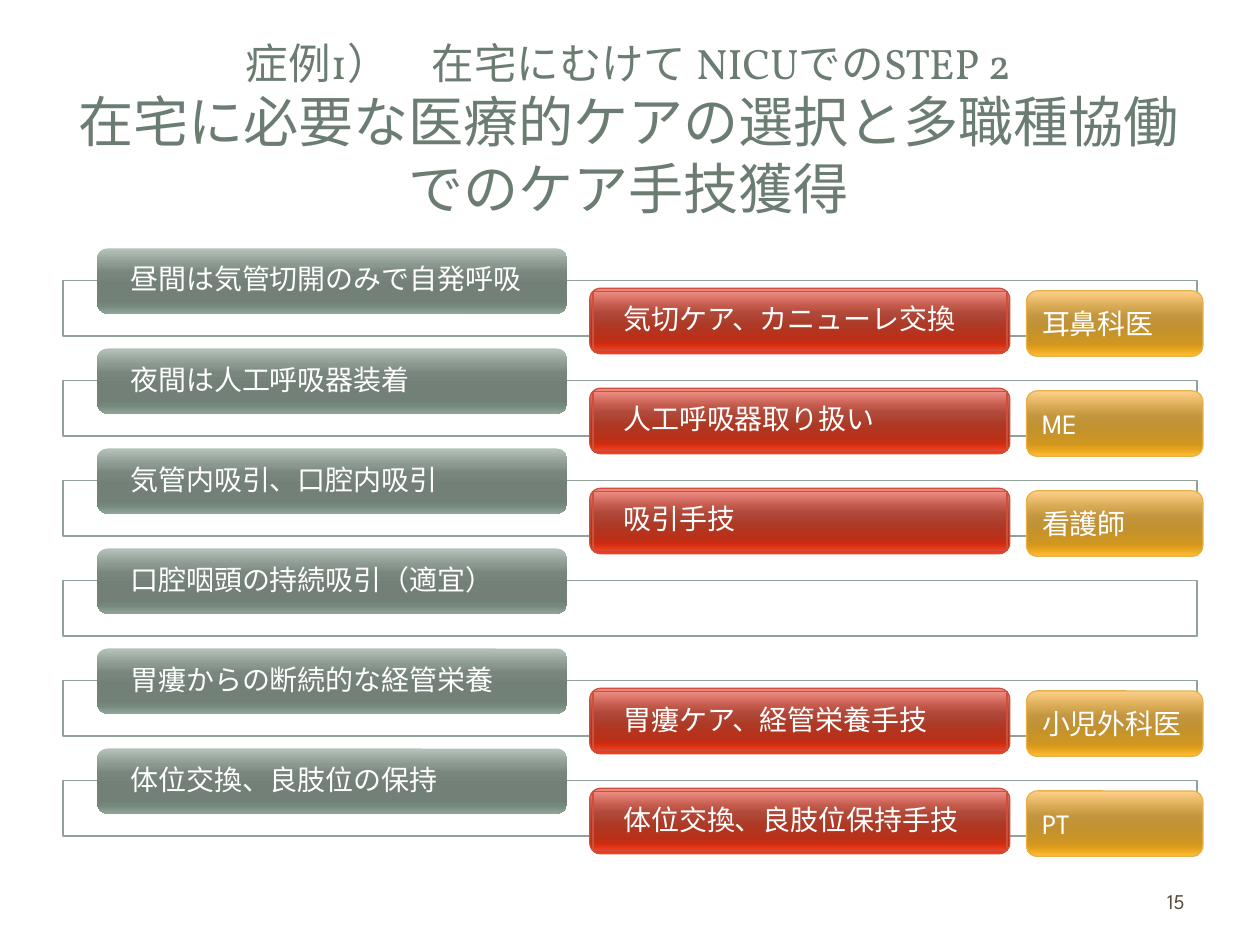
import pptx
import pptx.util
import pptx.dml.color
import pptx.enum.shapes
import pptx.enum.text
import pptx.oxml
import pptx.oxml.ns
import lxml.etree

Pt = pptx.util.Pt
SHAPE = pptx.enum.shapes.MSO_SHAPE
ALIGN = pptx.enum.text.PP_ALIGN
MIDDLE = pptx.enum.text.MSO_ANCHOR.MIDDLE

BODY_FONT = "League Spartan"
ROW_PITCH = 57.15
STOPS = [0, 25, 38, 55, 80, 88, 100]
GREEN = ["B6C3BB", "8B9890", "79867E", "728078", "708176", "75887C", "91A79A"]
RED = ["EF8E85", "C1584A", "B04839", "AD3A26", "BA2F18", "CD2C10", "F63D1F"]
GOLD = ["FFD08A", "D7A952", "C49640", "C29230", "CF9621", "E4A119", "FFBD3B"]
ROWS = [
    ("昼間は気管切開のみで自発呼吸", "気切ケア、カニューレ交換", "耳鼻科医"),
    ("夜間は人工呼吸器装着", "人工呼吸器取り扱い", "ME"),
    ("気管内吸引、口腔内吸引", "吸引手技", "看護師"),
    ("口腔咽頭の持続吸引（適宜）", None, None),
    ("胃瘻からの断続的な経管栄養", "胃瘻ケア、経管栄養手技", "小児外科医"),
    ("体位交換、良肢位の保持", "体位交換、良肢位保持手技", "PT"),
]


def rgb(value):
    """Turn a hex string into a colour."""
    return pptx.dml.color.RGBColor.from_string(value)


def style_run(r, size, color, font=BODY_FONT):
    """Set size, colour and font of a run."""
    r.font.size = Pt(size)
    r.font.color.rgb = rgb(color)
    r.font.name = font


def set_gradient(sp, colors):
    """Fill a shape from top to bottom through the shared stops."""
    qn = pptx.oxml.ns.qn
    sp.fill.gradient()
    sp.fill.gradient_angle = 270
    stops = sp.element.spPr.find(qn("a:gradFill")).find(qn("a:gsLst"))
    for gs in list(stops):
        stops.remove(gs)
    for position, color in zip(STOPS, colors):
        gs = lxml.etree.SubElement(stops, qn("a:gs"), pos=str(position * 1000))
        lxml.etree.SubElement(gs, qn("a:srgbClr"), val=color)


def add_box(s, kind, left, top, width, height, line=None):
    """Add a shadowless shape with an optional thin outline."""
    sp = s.shapes.add_shape(kind, Pt(left), Pt(top), Pt(width), Pt(height))
    sp.shadow.inherit = False
    if line:
        sp.line.color.rgb = rgb(line)
        sp.line.width = Pt(0.75)
    else:
        sp.line.fill.background()
    return sp


def add_label(sp, text, inset=None):
    """Write white left-aligned text, tightly set when an inset is given."""
    tf = sp.text_frame
    tf.text = text
    tf.word_wrap = True
    tf.vertical_anchor = MIDDLE
    p = tf.paragraphs[0]
    p.alignment = ALIGN.LEFT
    if inset:
        tf.margin_left = tf.margin_right = Pt(inset)
        tf.margin_top = tf.margin_bottom = 0
        p.line_spacing = 0.9
    style_run(p.runs[0], 16, "FFFFFF")


def add_row(s, offset, state, skill, staff):
    """Add one patient state with the care skill and the staff teaching it."""
    sp = add_box(s, SHAPE.RECTANGLE, 36, 160.3 + offset, 648, 31.75, "93A299")
    sp.fill.solid()
    sp.fill.fore_color.rgb = rgb("FFFFFF")
    sp = add_box(s, SHAPE.ROUNDED_RECTANGLE, 55.5, 142 + offset, 268.6, 37.2)
    set_gradient(sp, GREEN)
    add_label(sp, state, 17.3)
    if not skill:
        return
    sp = add_box(s, SHAPE.ROUNDED_RECTANGLE, 337, 164.7 + offset, 240, 37.4, "CE503A")
    set_gradient(sp, RED)
    sp = add_box(s, SHAPE.RECTANGLE, 338.9, 166.5 + offset, 236.6, 33.8, "CE503A")
    set_gradient(sp, RED)
    add_label(sp, skill, 17.3)
    sp = add_box(s, SHAPE.ROUNDED_RECTANGLE, 586.6, 166.2 + offset, 100.8, 37.4, "E7B248")
    set_gradient(sp, GOLD)
    add_label(sp, staff)


def add_title(s):
    """Fill the title placeholder with a small and a large line."""
    sp = s.shapes.title
    sp.left, sp.top, sp.width, sp.height = Pt(34), Pt(32.4), Pt(650), Pt(82)
    tf = sp.text_frame
    tf.text = "症例1）　在宅にむけて NICUでのSTEP 2\v在宅に必要な医療的ケアの選択と多職種協働でのケア手技獲得"
    tf.word_wrap = True
    tf.auto_size = pptx.enum.text.MSO_AUTO_SIZE.NONE
    tf.vertical_anchor = MIDDLE
    p = tf.paragraphs[0]
    p.alignment = ALIGN.CENTER
    for r, size in zip(p.runs, (24.3, 31.5)):
        style_run(r, size, "6B7D72", "Vollkorn")


def add_page_number(s, number):
    """Add the page number at the lower right."""
    tf = s.shapes.add_textbox(Pt(516), Pt(500.4), Pt(168), Pt(28.8)).text_frame
    tf.text = number
    tf.word_wrap = True
    tf.vertical_anchor = MIDDLE
    p = tf.paragraphs[0]
    p.alignment = ALIGN.RIGHT
    style_run(p.runs[0], 12, "564B3C")


def main():
    """Build and save the slide."""
    prs = pptx.Presentation()
    prs.slide_width, prs.slide_height = Pt(720), Pt(540)
    s = prs.slides.add_slide(prs.slide_layouts[5])
    add_title(s)
    for i, row in enumerate(ROWS):
        add_row(s, i * ROW_PITCH, *row)
    add_page_number(s, "15")
    prs.save("out.pptx")


if __name__ == "__main__":
    main()
